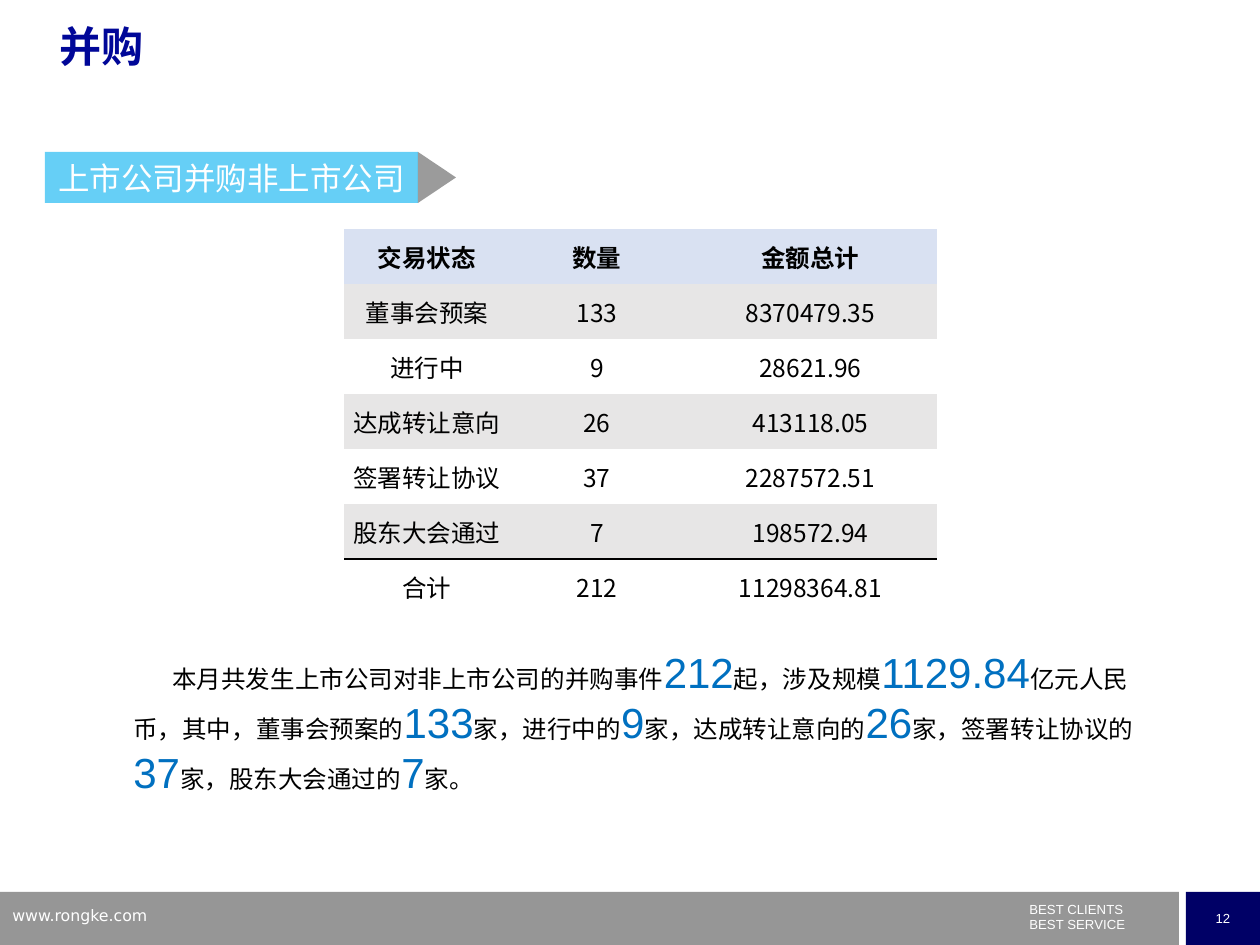
from lxml.etree import SubElement
from pptx import Presentation
from pptx.dml.color import RGBColor
from pptx.enum.shapes import MSO_SHAPE as Shape
from pptx.enum.text import MSO_ANCHOR as Anchor, PP_ALIGN as Align
from pptx.oxml import parse_xml
from pptx.oxml.ns import nsdecls, qn
from pptx.util import Emu, Pt

SCALE = 914400 / 126
NOTO, ARIAL, WEB = "Noto Sans CJK SC", "Arial", "DejaVu Sans"
PLAIN = "{2D5ABB26-0587-4C30-8999-92F81FD0307C}"
STATES = [
    ("交易状态", "数量", "金额总计"),
    ("董事会预案", "133", "8370479.35"),
    ("进行中", "9", "28621.96"),
    ("达成转让意向", "26", "413118.05"),
    ("签署转让协议", "37", "2287572.51"),
    ("股东大会通过", "7", "198572.94"),
    ("合计", "212", "11298364.81"),
]
STORY = [
    "本月共发生上市公司对非上市公司的并购事件", "212",
    "起，涉及规模", "1129.84",
    "亿元人民币，其中，董事会预案的", "133",
    "家，进行中的", "9",
    "家，达成转让意向的", "26",
    "家，签署转让协议的", "37",
    "家，股东大会通过的", "7",
    "家。",
]


def px(num):
    """Turn pixels into EMU."""
    return Emu(round(num * SCALE))


def place(*box):
    """Turn a pixel box into EMU lengths."""
    return [px(num) for num in box]


def color(code):
    """Make a colour from a hex string."""
    return RGBColor.from_string(code)


def style(run, size, face, code, bold=False):
    """Format one run."""
    font = run.font
    font.size, font.name, font.bold = Pt(size), face, bold
    font.color.rgb = color(code)
    SubElement(run._r.get_or_add_rPr(), qn("a:ea"), typeface=NOTO)


def write(frame, text, size, face, code, bold=False, align=Align.LEFT):
    """Fill a text frame and format all its runs."""
    frame.text = text
    for para in frame.paragraphs:
        para.alignment = align
        for run in para.runs:
            style(run, size, face, code, bold)


def label(slide, box, *look):
    """Add a wrapping text box and return its frame."""
    frame = slide.shapes.add_textbox(*place(*box)).text_frame
    frame.word_wrap = True
    write(frame, *look)
    return frame


def block(shapes, kind, box, code, alpha=100):
    """Add a flat filled shape without a line."""
    shape = shapes.add_shape(kind, *place(*box))
    shape.shadow.inherit = False
    shape.line.fill.background()
    shape.fill.solid()
    shape.fill.fore_color.rgb = color(code)
    if alpha < 100:
        tint = shape._element.spPr.find(qn("a:solidFill"))[0]
        SubElement(tint, qn("a:alpha"), val=str(alpha * 1000))
    return shape


def footer(slide, x, y, w, h):
    """Draw the bottom bar with address, motto and page number."""
    page = 74
    block(slide.shapes, Shape.RECTANGLE, (x, y, w - page - 7, h), "969696")
    tile = block(slide.shapes, Shape.RECTANGLE, (x + w - page, y, page, h), "000066")
    tile.text_frame.vertical_anchor = Anchor.MIDDLE
    write(tile.text_frame, "12", 7.5, ARIAL, "FFFFFF", False, Align.CENTER)
    motto = label(slide, (x + 1017, y + 9, 189, 37),
                  "BEST CLIENTS\nBEST SERVICE", 7.5, ARIAL, "FFFFFF")
    motto.margin_top = 0
    label(slide, (x, y + 8, 302, 33), "www.rongke.com", 9, WEB, "FFFFFF")


def banner(slide, x, y, w, h):
    """Draw the section label with its arrow tip."""
    group = slide.shapes.add_group_shape().shapes
    bar = block(group, Shape.RECTANGLE, (x, y, w, h), "00B0F0", 60)
    frame = bar.text_frame
    frame.vertical_anchor = Anchor.MIDDLE
    frame.margin_left = frame.margin_right = 0
    write(frame, "上市公司并购非上市公司", 18, NOTO, "FFFFFF", False, Align.CENTER)
    depth = 38
    left, top = x + w + (depth - h) / 2, y + (h - depth) / 2
    tip = block(group, Shape.ISOSCELES_TRIANGLE, (left, top, h, depth), "595959", 60)
    tip.rotation = 90


def rule(cell, side):
    """Draw a thin black line on one side of a cell."""
    line = parse_xml(
        f'<a:{side} {nsdecls("a")} w="12700"><a:solidFill>'
        f'<a:srgbClr val="000000"/></a:solidFill></a:{side}>')
    cell._tc.get_or_add_tcPr().insert(0, line)


def deals(slide, x, y, w, h):
    """Draw the table of deal states."""
    count = len(STATES)
    table = slide.shapes.add_table(count, 3, *place(x, y, w, h)).table
    table._tbl.tblPr.find(qn("a:tableStyleId")).text = PLAIN
    for col, wide in zip(table.columns, (166, 174, w - 340)):
        col.width = px(wide)
    for i, texts in enumerate(STATES):
        table.rows[i].height = px(h / count)
        fill = "D9E1F2" if i == 0 else ("FFFFFF", "E7E6E6")[i % 2]
        for j, text in enumerate(texts):
            cell = table.cell(i, j)
            cell.margin_left = cell.margin_right = cell.margin_top = px(1)
            cell.margin_bottom = 0
            cell.vertical_anchor = Anchor.MIDDLE
            cell.fill.solid()
            cell.fill.fore_color.rgb = color(fill)
            write(cell.text_frame, text, 14, NOTO, "000000", i == 0, Align.CENTER)
            if i == count - 2:
                rule(cell, "lnB")
            elif i == count - 1:
                rule(cell, "lnT")


def story(slide, x, y, w, h):
    """Write the summary with its figures set large."""
    frame = slide.shapes.add_textbox(*place(x, y, w, h)).text_frame
    frame.word_wrap = True
    para = frame.paragraphs[0]
    para._p.get_or_add_pPr().set("indent", str(px(39)))
    for i, text in enumerate(STORY):
        run = para.add_run()
        run.text = text
        look = (24, ARIAL, "0070C0") if i % 2 else (14, NOTO, "000000")
        style(run, *look)


def main():
    """Build and save the slide."""
    deck = Presentation()
    deck.slide_width, deck.slide_height = place(1260, 945)
    slide = deck.slides.add_slide(deck.slide_layouts[6])
    footer(slide, 0, 892, 1260, 53)
    banner(slide, 45, 152, 373, 51)
    title = label(slide, (47, 20, 1134, 88), "并购", 24, ARIAL, "000798", True)
    title.paragraphs[0].line_spacing = 0.9
    story(slide, 121, 640, 1038, 165)
    deals(slide, 344, 229, 593, 385)
    deck.save("out.pptx")


if __name__ == "__main__":
    main()
